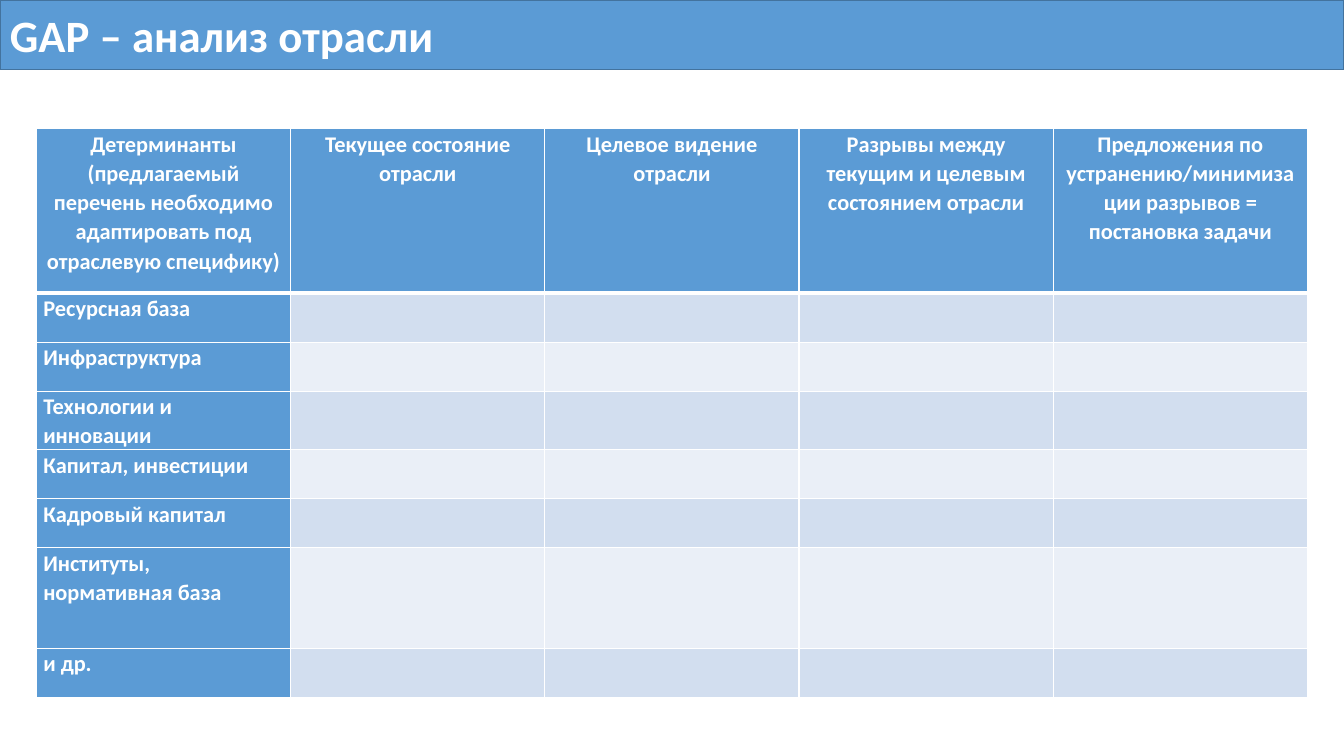
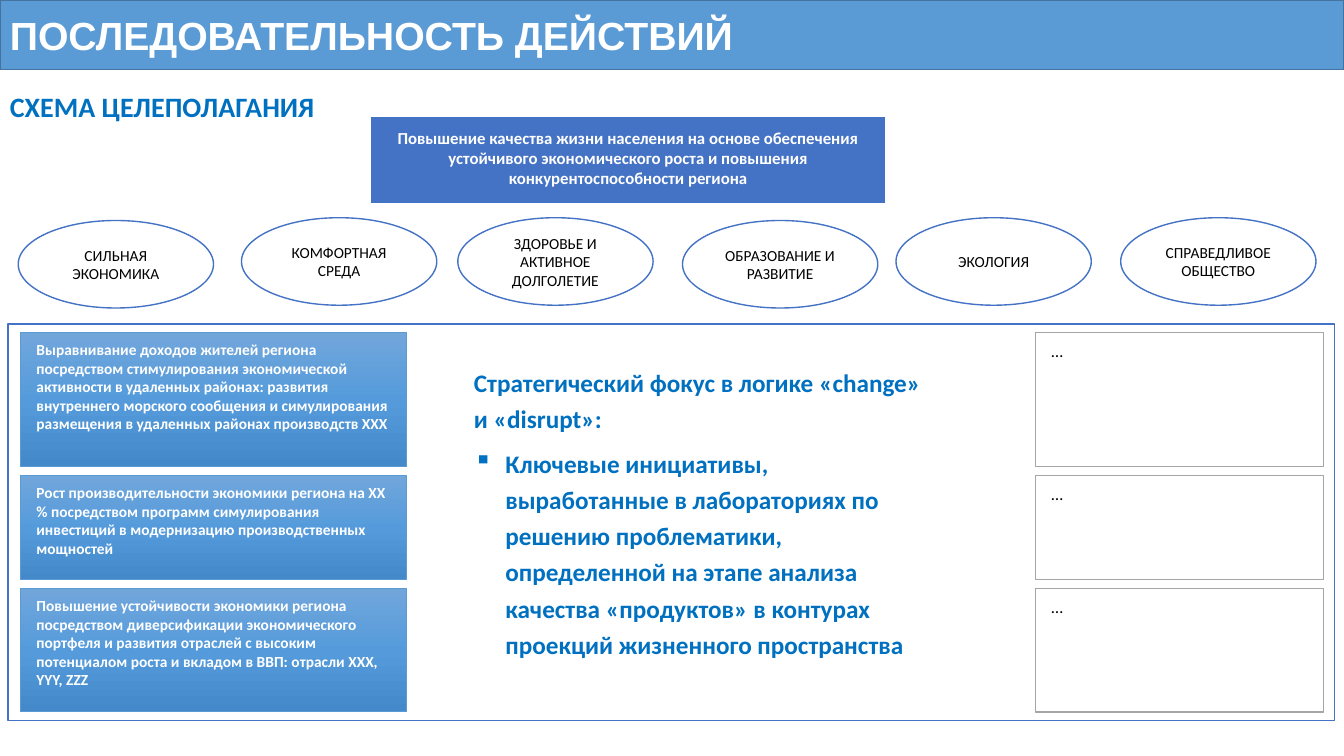
import copy
import pptx
import pptx.util
import pptx.dml.color
import pptx.enum.shapes
import pptx.enum.text
import pptx.oxml
import pptx.oxml.ns
import lxml.etree

Pt = pptx.util.Pt
RGB = pptx.dml.color.RGBColor
qn = pptx.oxml.ns.qn
KIND = pptx.enum.shapes.MSO_SHAPE
MID = pptx.enum.text.MSO_ANCHOR.MIDDLE
TOP = pptx.enum.text.MSO_ANCHOR.TOP
LEFT = pptx.enum.text.PP_ALIGN.LEFT
MIDDLE = pptx.enum.text.PP_ALIGN.CENTER

# Shared colours
BLUE = RGB(0x5B, 0x9B, 0xD5)
EDGE = RGB(0x43, 0x73, 0x9E)
ROYAL = RGB(0x44, 0x72, 0xC4)
INK = RGB(0x00, 0x70, 0xC0)
GRAY = RGB(0xA5, 0xA5, 0xA5)
DARK = RGB(0xD2, 0xDE, 0xEF)
PALE = RGB(0xEA, 0xEF, 0xF7)
WHITE = RGB(0xFF, 0xFF, 0xFF)
BLACK = RGB(0, 0, 0)
GRADE = [(0, RGB(0x71, 0xA6, 0xDB)), (0.5, RGB(0x55, 0x9B, 0xDB)),
         (1, RGB(0x44, 0x8A, 0xCA))]

# Shared sizes
WIDE, HIGH = 960, 540
BAND = 49.7
PLAIN = (7.2, 3.6, 7.2, 3.6)
ROOMY = (11.5, 5.75, 11.5, 8.65)
NONE = (0, 0, 0, 0)
TIGHT = (4.95, 0, 4.95, 0)

# Content of the table
HEADS = [
    "Детерминанты (предлагаемый перечень необходимо адаптировать под отраслевую специфику)",
    "Текущее состояние отрасли",
    "Целевое видение отрасли",
    "Разрывы между текущим и целевым состоянием отрасли",
    "Предложения по устранению/минимизации разрывов = постановка задачи",
]
ROWS = [
    ("Ресурсная база", 35), ("Инфраструктура", 35),
    ("Технологии и инновации", 35), ("Капитал, инвестиции", 35),
    ("Кадровый капитал", 35), ("Институты, нормативная база", 71.8),
    ("и др.", 35),
]

# Content of the goal scheme
GOAL = ("Повышение качества жизни населения на основе обеспечения устойчивого "
        "экономического роста и повышения конкурентоспособности региона")
OVALS = [  # text, left, top
    ("СИЛЬНАЯ ЭКОНОМИКА", 13, 157.5),
    ("КОМФОРТНАЯ СРЕДА", 172.5, 155.5),
    ("ЗДОРОВЬЕ И АКТИВНОЕ ДОЛГОЛЕТИЕ", 327, 155.5),
    ("ОБРАЗОВАНИЕ И РАЗВИТИЕ", 487.5, 157.5),
    ("ЭКОЛОГИЯ", 640, 155.5),
    ("СПРАВЕДЛИВОЕ ОБЩЕСТВО", 800.5, 155.5),
]
TASKS = [  # text, height
    ("Выравнивание доходов жителей региона посредством стимулирования "
     "экономической активности в удаленных районах: развития внутреннего "
     "морского сообщения и симулирования размещения в удаленных районах "
     "производств ХХХ", 95.8),
    ("Рост производительности экономики региона на ХХ % посредством программ "
     "симулирования инвестиций в модернизацию производственных мощностей", 74.2),
    ("Повышение устойчивости экономики региона посредством диверсификации "
     "экономического портфеля и развития отраслей с высоким потенциалом роста "
     "и вкладом в ВВП: отрасли ХХХ, YYY, ZZZ", 88.2),
]
FOCUS = [
    "Стратегический фокус в логике «change» и «disrupt»:",
    "Ключевые инициативы, выработанные в лабораториях по решению проблематики, "
    "определенной на этапе анализа качества «продуктов» в контурах проекций "
    "жизненного пространства",
]


def assign(thing, **vals):
    for key, val in vals.items():
        setattr(thing, key, val)


def write(frame, lines, size, tint, bold=False, face="Calibri", align=LEFT, **form):
    """Fill a text frame with one paragraph per line."""
    for i, line in enumerate(lines):
        para = frame.paragraphs[0] if i == 0 else frame.add_paragraph()
        assign(para, alignment=align, **form)
        run = para.add_run()
        run.text = line
        assign(run.font, size=Pt(size), bold=bold, name=face)
        run.font.color.rgb = tint


def inset(thing, pads):
    for side, pad in zip(("left", "top", "right", "bottom"), pads):
        setattr(thing, "margin_" + side, Pt(pad))


def frame_of(shape, pads, anchor):
    frame = shape.text_frame
    assign(frame, word_wrap=True, vertical_anchor=anchor)
    inset(frame, pads)
    return frame


def draw(slide, place, fill, line, width, kind=KIND.RECTANGLE, pads=ROOMY, anchor=TOP):
    """Add a shape; fill is a colour, a list of stops or None."""
    shape = slide.shapes.add_shape(kind, *map(Pt, place))
    shape.shadow.inherit = False
    if fill is None:
        shape.fill.background()
    elif isinstance(fill, list):
        shade(shape, fill)
    else:
        shape.fill.solid()
        shape.fill.fore_color.rgb = fill
    shape.line.color.rgb = line
    shape.line.width = Pt(width)
    return frame_of(shape, pads, anchor)


def shade(shape, stops):
    shape.fill.gradient()
    shape.fill.gradient_angle = 270
    group = shape._element.spPr.find(qn("a:gradFill")).find(qn("a:gsLst"))
    while len(group) < len(stops):
        group.append(copy.deepcopy(group[0]))
    for stop, (spot, tint) in zip(shape.fill.gradient_stops, stops):
        stop.position = spot
        stop.color.rgb = tint


def text_box(slide, place, pads=PLAIN):
    return frame_of(slide.shapes.add_textbox(*map(Pt, place)), pads, TOP)


def border(cell, widths):
    """White cell lines: left, right, top, bottom."""
    props = cell._tc.get_or_add_tcPr()
    for i, (side, width) in enumerate(zip("LRTB", widths)):
        line = lxml.etree.Element(qn("a:ln" + side), w=str(Pt(width)))
        fill = lxml.etree.SubElement(line, qn("a:solidFill"))
        lxml.etree.SubElement(fill, qn("a:srgbClr"), val=str(WHITE))
        props.insert(i, line)


def bullet(para, mark, dent):
    props = para._p.get_or_add_pPr()
    props.set("marL", str(Pt(dent)))
    props.set("indent", str(-Pt(dent)))
    lxml.etree.SubElement(props, qn("a:buChar"), char=mark)


def new_slide(deck, title, size, face):
    slide = deck.slides.add_slide(deck.slide_layouts[6])
    frame = draw(slide, (0, 0, WIDE, BAND), BLUE, EDGE, 1, pads=PLAIN, anchor=MID)
    write(frame, [title], size, WHITE, True, face)
    return slide


def gap_slide(deck):
    slide = new_slide(deck, "GAP – анализ отрасли", 32, "Calibri")
    grid = [HEADS] + [[name] + [""] * (len(HEADS) - 1) for name, _ in ROWS]
    highs = [117.5] + [high for _, high in ROWS]
    place = (26, 92, 908, sum(highs))
    table = slide.shapes.add_table(len(grid), len(HEADS), *map(Pt, place)).table
    for col in table.columns:
        col.width = Pt(place[2] / len(HEADS))
    for r, (texts, high) in enumerate(zip(grid, highs)):
        table.rows[r].height = Pt(high)
        for c, text in enumerate(texts):
            cell = table.cell(r, c)
            cell.fill.solid()
            band = DARK if r % 2 else PALE
            cell.fill.fore_color.rgb = BLUE if r == 0 or c == 0 else band
            border(cell, (1, 1, 3 if r == 1 else 1, 3 if r == 0 else 1))
            inset(cell, TIGHT)
            if text:
                write(cell.text_frame, [text], 16, WHITE, True,
                      align=LEFT if r else MIDDLE, line_spacing=1.07)


def goal_slide(deck):
    slide = new_slide(deck, "ПОСЛЕДОВАТЕЛЬНОСТЬ ДЕЙСТВИЙ", 28, "Arial")
    write(text_box(slide, (0, 63.4, WIDE, 34)), ["СХЕМА ЦЕЛЕПОЛАГАНИЯ"], 20, INK, True,
          line_spacing=0.9, space_before=Pt(10))

    # Main goal and its ovals
    frame = draw(slide, (264.5, 83, 368.5, 62.5), ROYAL, WHITE, 1.5, anchor=MID)
    write(frame, [GOAL], 12, WHITE, True, align=MIDDLE)
    for text, left, top in OVALS:
        frame = draw(slide, (left, top, 139.5, 62.5), WHITE, ROYAL, 1,
                     KIND.OVAL, NONE, MID)
        write(frame, [text], 11, BLACK, align=MIDDLE)

    # Panel with tasks on the left, open boxes on the right
    draw(slide, (5.75, 231.5, 947.5, 283), WHITE, ROYAL, 1)
    top = 237.5
    for text, high in TASKS:
        frame = draw(slide, (14.5, top, 276, high), GRADE, BLUE, 0.5)
        write(frame, [text], 11, WHITE, True)
        frame = draw(slide, (739.5, top, 206, high), None, GRAY, 1)
        write(frame, ["…"], 12, BLACK)
        top += high + 6.4

    # Focus text
    frame = text_box(slide, (327, 252, 346.5, 146), ROOMY)
    write(frame, FOCUS, 18, INK, True, line_spacing=1.2, space_after=Pt(6))
    bullet(frame.paragraphs[1], "▪", 22.5)


def main():
    deck = pptx.Presentation()
    assign(deck, slide_width=Pt(WIDE), slide_height=Pt(HIGH))
    gap_slide(deck)
    goal_slide(deck)
    deck.save("out.pptx")


if __name__ == "__main__":
    main()
